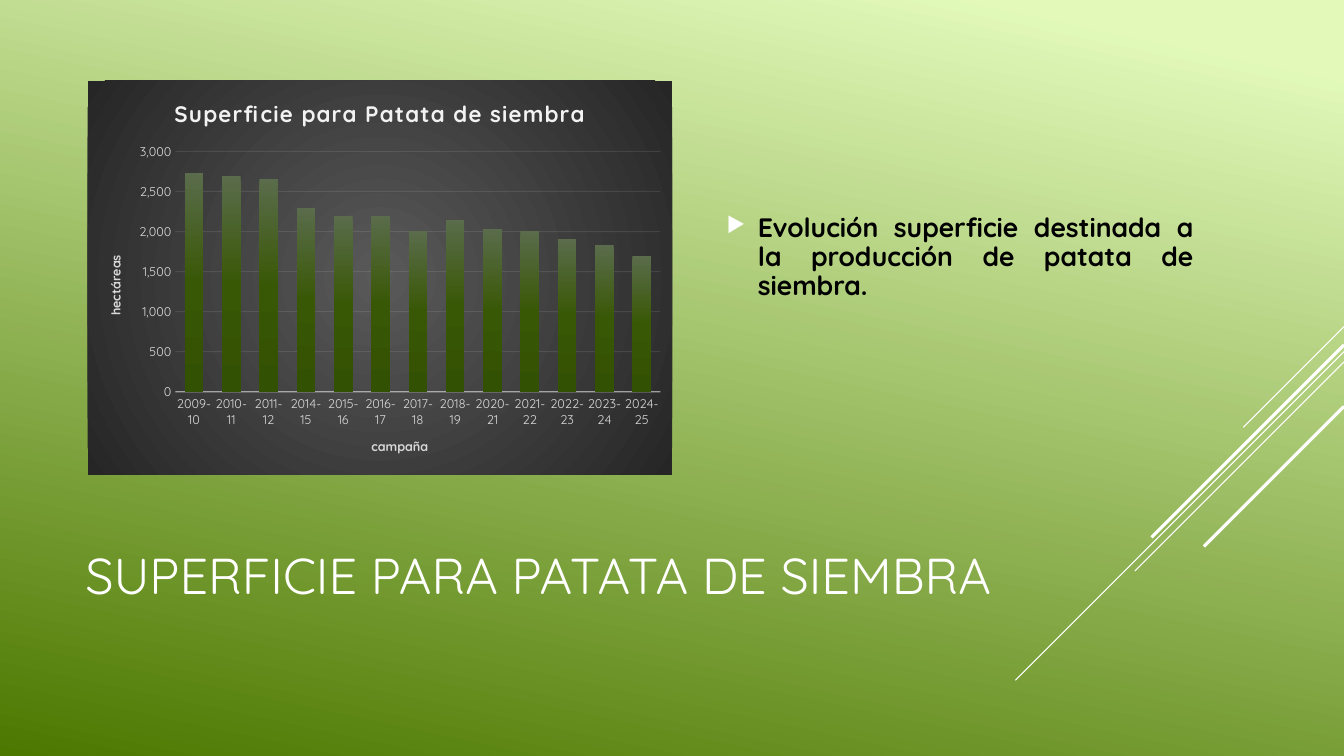
from pptx import Presentation
from pptx.chart.data import CategoryChartData
from pptx.dml.color import RGBColor
from pptx.enum.chart import XL_CHART_TYPE, XL_TICK_MARK
from pptx.enum.shapes import MSO_CONNECTOR
from pptx.enum.text import MSO_ANCHOR, PP_ALIGN
from pptx.oxml import parse_xml
from pptx.oxml.ns import nsdecls, qn
from pptx.util import Cm, Pt

THEME = {
    "font": "Quicksand",
    "white": "FFFFFF", "black": "000000",
    "heading": "F2F2F2", "label": "D9D9D9",
    "background": ((0.07, "E2F9BA"), (1, "4C7800")),
    "panel": ((0, "595959"), (100, "262626")),
    "bar": ((0, "5A6C4B"), (50, "395806"), (100, "335102")),
    "title_size": 36, "body_size": 19, "chart_title_size": 16, "axis_size": 9,
}


def write(tf, text, size, color, bold=False, align=None, spacing=None, tracking=0):
    p = tf.paragraphs[0]
    p.alignment = align
    p.line_spacing = spacing
    r = p.add_run()
    r.text = text
    r.font.name = THEME["font"]
    r.font.size = Pt(size)
    r.font.bold = bold
    r.font.color.rgb = RGBColor.from_string(color)
    if tracking:
        r._r.get_or_add_rPr().set("spc", str(tracking))
    return p


def gradient(stops, direction):
    marks = "".join(
        f'<a:gs pos="{pos * 1000}"><a:srgbClr val="{color}"/></a:gs>' for pos, color in stops
    )
    return f'<a:gradFill {nsdecls("a")} rotWithShape="1"><a:gsLst>{marks}</a:gsLst>{direction}</a:gradFill>'


prs = Presentation()
prs.slide_width, prs.slide_height = Cm(33.87), Cm(19.05)
s = prs.slides.add_slide(prs.slide_layouts[6])

fill = s.background.fill
fill.gradient()
fill.gradient_angle = 258
for stop, (position, color) in zip(fill.gradient_stops, THEME["background"]):
    stop.position = position
    stop.color.rgb = RGBColor.from_string(color)

for top, run, width in (
    (8.23, 2.54, 0.75),
    (8.86, 8.28, 0.75),
    (9.12, 5.27, 0.75),
    (8.69, 4.85, 2.25),
    (10.24, 3.53, 2.25),
):
    line = s.shapes.add_connector(
        MSO_CONNECTOR.STRAIGHT, Cm(33.87), Cm(top), Cm(33.87 - run), Cm(top + run)
    )
    line.line.color.rgb = RGBColor.from_string(THEME["white"])
    line.line.width = Pt(width)
    line._element.spPr.append(parse_xml(f'<a:effectLst {nsdecls("a")}/>'))

title = s.shapes.add_textbox(Cm(1.9), Cm(12.47), Cm(23.7), Cm(4.19))
body = s.shapes.add_textbox(Cm(18.06), Cm(2.03), Cm(12.27), Cm(9.93))
for sp in (title, body):
    sp.text_frame.word_wrap = True
    sp.text_frame.vertical_anchor = MSO_ANCHOR.MIDDLE
body.text_frame.margin_bottom = Cm(1.12)

write(title.text_frame, "SUPERFICIE PARA PATATA DE SIEMBRA",
      THEME["title_size"], THEME["white"], spacing=0.9)
p = write(body.text_frame, "Evolución superficie destinada a la producción de patata de siembra.",
          THEME["body_size"], THEME["black"], bold=True, align=PP_ALIGN.JUSTIFY, spacing=0.9)
pPr = p._p.get_or_add_pPr()
pPr.set("marL", str(Cm(0.79)))
pPr.set("indent", str(-Cm(0.79)))
for bullet in (
    f'<a:buClr {nsdecls("a")}><a:srgbClr val="{THEME["white"]}"/></a:buClr>',
    f'<a:buSzPct {nsdecls("a")} val="80000"/>',
    f'<a:buChar {nsdecls("a")} char="▶"/>',
):
    pPr.append(parse_xml(bullet))

data = CategoryChartData(number_format="#,##0")
data.categories = [
    "2009-10", "2010-11", "2011-12", "2014-15", "2015-16", "2016-17", "2017-18",
    "2018-19", "2020-21", "2021-22", "2022-23", "2023-24", "2024-25",
]
data.add_series("Series 1", (
    2730, 2690, 2650, 2290, 2190, 2200, 2010, 2150, 2030, 2010, 1910, 1830, 1700,
))
chart = s.shapes.add_chart(
    XL_CHART_TYPE.COLUMN_CLUSTERED, Cm(2.21), Cm(2.03), Cm(14.73), Cm(9.93), data
).chart
chart.has_legend = False
chart.font.name = THEME["font"]
chart.font.size = Pt(10)
chart.font.color.rgb = RGBColor.from_string(THEME["white"])
write(chart.chart_title.text_frame, "Superficie para Patata de siembra",
      THEME["chart_title_size"], THEME["heading"], bold=True, tracking=100)
chart.chart_title.include_in_layout = False

plot = chart.plots[0]
plot.gap_width, plot.overlap = 100, -24
plot.vary_by_categories = False
bars = plot.series[0]
bars.format.fill.solid()
spPr = bars._element.spPr
spPr.replace(spPr[0], parse_xml(gradient(THEME["bar"], '<a:lin ang="5400000" scaled="0"/>')))

for axis, name in ((chart.category_axis, "campaña"), (chart.value_axis, "hectáreas")):
    write(axis.axis_title.text_frame, name, THEME["axis_size"], THEME["label"], bold=True)
    axis.major_tick_mark = axis.minor_tick_mark = XL_TICK_MARK.NONE
    axis.tick_labels.font.name = THEME["font"]
    axis.tick_labels.font.size = Pt(THEME["axis_size"])
    axis.tick_labels.font.color.rgb = RGBColor.from_string(THEME["label"])

value_axis = chart.value_axis
value_axis.axis_title.text_frame._txBody.bodyPr.set("rot", "-5400000")
value_axis.minimum_scale, value_axis.maximum_scale, value_axis.major_unit = 0, 3000, 500
value_axis.tick_labels.number_format = "#,##0"
value_axis.tick_labels.number_format_is_linked = False
value_axis.format.line.fill.background()

space = chart._chartSpace
for rule, width, opacity, where in (
    (chart.category_axis.format.line, 1, 54, ".//c:catAx/c:spPr//a:srgbClr"),
    (value_axis.major_gridlines.format.line, 0.75, 10, ".//c:majorGridlines//a:srgbClr"),
):
    rule.color.rgb = RGBColor.from_string(THEME["heading"])
    rule.width = Pt(width)
    space.xpath(where)[0].append(
        parse_xml(f'<a:alpha {nsdecls("a")} val="{opacity * 1000}"/>')
    )

area = space.find(qn("c:chart")).find(qn("c:plotArea"))
for old in area.findall(qn("c:layout")):
    area.remove(old)
area.insert(0, parse_xml(
    f'<c:layout {nsdecls("c")}><c:manualLayout><c:layoutTarget val="inner"/>'
    '<c:xMode val="edge"/><c:yMode val="edge"/>'
    '<c:x val="0.15"/><c:y val="0.18"/><c:w val="0.83"/><c:h val="0.61"/>'
    '</c:manualLayout></c:layout>'
))
panel = gradient(
    THEME["panel"],
    '<a:path path="circle"><a:fillToRect l="50000" t="50000" r="50000" b="50000"/></a:path>',
)
space.find(qn("c:chart")).addnext(parse_xml(
    f'<c:spPr {nsdecls("c", "a")}>{panel}<a:ln><a:noFill/></a:ln></c:spPr>'
))

prs.save("out.pptx")
